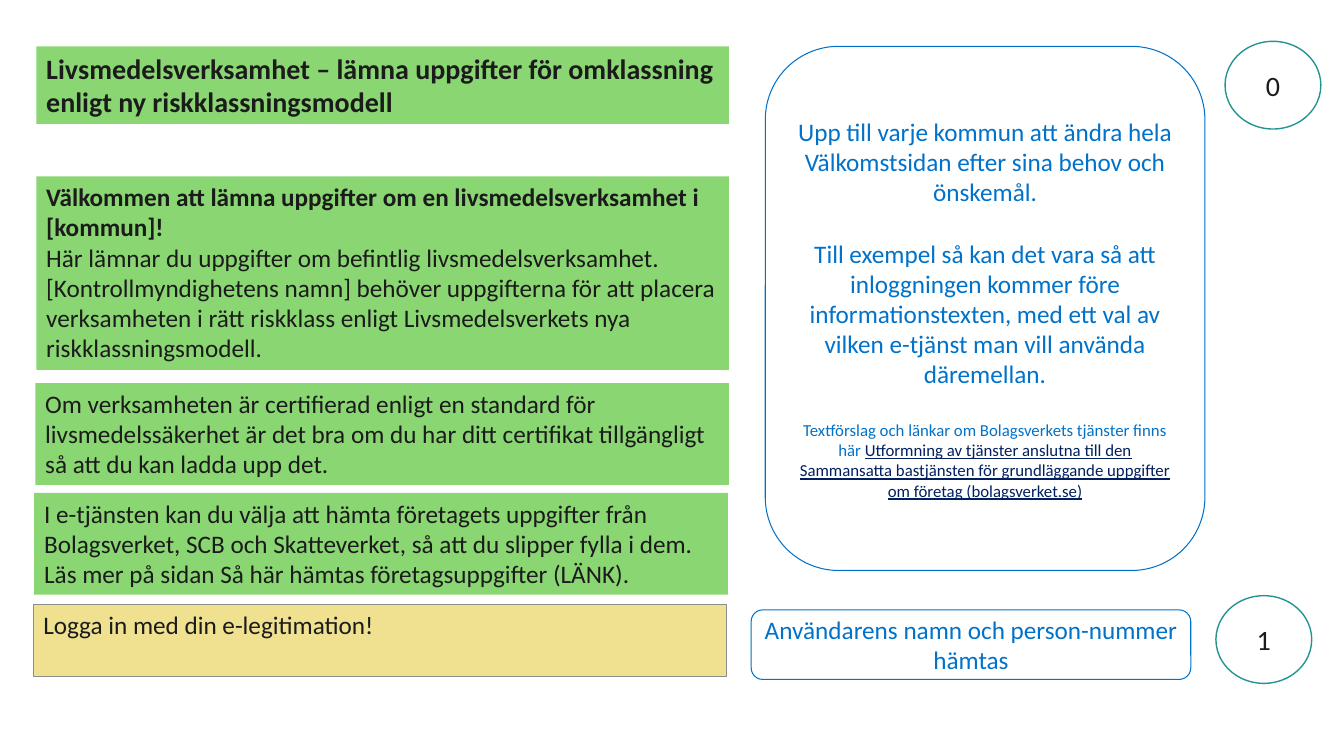
from pptx import Presentation
from pptx import util as u
from pptx.dml.color import RGBColor
from pptx.enum import shapes, text

COLORS = {
    "ink": "1B1B1B", "green": "8AD672", "sand": "F0E190", "grey": "8D8D8D",
    "blue": "0072CA", "navy": "002060", "teal": "259490", "white": "FFFFFF",
}
FORM = shapes.MSO_SHAPE.RECTANGLE
NOTE = shapes.MSO_SHAPE.ROUNDED_RECTANGLE
STEP = shapes.MSO_SHAPE.OVAL

deck = Presentation()
deck.slide_width, deck.slide_height = u.Inches(13.33), u.Inches(7.5)
slide = deck.slides.add_slide(deck.slide_layouts[6])


def rgb(name):
    return RGBColor.from_string(COLORS[name])


def add_box(kind, area, paragraphs, size, ink, fill=None, line=None, weight=0.75):
    """Area is left, top, width, height in percent of the slide."""
    left, top, width, height = area
    box = slide.shapes.add_shape(
        kind,
        int(deck.slide_width * left / 100), int(deck.slide_height * top / 100),
        int(deck.slide_width * width / 100), int(deck.slide_height * height / 100))
    box.shadow.inherit = False
    if fill:
        box.fill.solid()
        box.fill.fore_color.rgb = rgb(fill)
    else:
        box.fill.background()
    if line:
        box.line.color.rgb = rgb(line)
        box.line.width = u.Pt(weight)
    else:
        box.line.fill.background()

    frame = box.text_frame
    frame.word_wrap = True
    is_form = kind == FORM
    frame.vertical_anchor = text.MSO_ANCHOR.TOP if is_form else text.MSO_ANCHOR.MIDDLE
    frame.text = "\n".join(paragraphs)
    for paragraph in frame.paragraphs:
        paragraph.alignment = text.PP_ALIGN.LEFT if is_form else text.PP_ALIGN.CENTER
        for run in paragraph.runs:
            run.font.name = "Calibri"
            run.font.size = u.Pt(size)
            run.font.color.rgb = rgb(ink)
    return frame.paragraphs


# Form texts in the left column
heading, = add_box(FORM, (2.7, 6.13, 51.54, 10.27), [
    "Livsmedelsverksamhet – lämna uppgifter för omklassning enligt ny riskklassningsmodell",
], 20, "ink", "green")
welcome, _ = add_box(FORM, (2.7, 23.33, 51.54, 25.6), [
    "Välkommen att lämna uppgifter om en livsmedelsverksamhet i [kommun]!",
    "Här lämnar du uppgifter om befintlig livsmedelsverksamhet. "
    "[Kontrollmyndighetens namn] behöver uppgifterna för att placera verksamheten "
    "i rätt riskklass enligt Livsmedelsverkets nya riskklassningsmodell.",
], 18, "ink", "green")
for title in (heading, welcome):
    title.runs[0].font.bold = True

add_box(FORM, (2.63, 50.67, 51.61, 13.47), [
    "Om verksamheten är certifierad enligt en standard för livsmedelssäkerhet är det bra "
    "om du har ditt certifikat tillgängligt så att du kan ladda upp det.",
], 18, "ink", "green")
add_box(FORM, (2.55, 65.2, 51.61, 13.47), [
    "I e-tjänsten kan du välja att hämta företagets uppgifter från Bolagsverket, SCB och "
    "Skatteverket, så att du slipper fylla i dem. Läs mer på sidan Så här hämtas "
    "företagsuppgifter (LÄNK).",
], 18, "ink", "green")
add_box(FORM, (2.48, 80, 51.54, 9.47), ["Logga in med din e-legitimation!"],
        18, "ink", "sand", "grey", 0.5)

# Notes to the municipality
_, example, source = add_box(NOTE, (56.94, 6.13, 32.71, 69.33), [
    "Upp till varje kommun att ändra hela Välkomstsidan efter sina behov och önskemål.",
    "Till exempel så kan det vara så att inloggningen kommer före informationstexten, "
    "med ett val av vilken e-tjänst man vill använda däremellan.",
    "Textförslag och länkar om Bolagsverkets tjänster finns här ",
], 18, "blue", line="blue")
for paragraph in (example, source):
    paragraph.space_before = u.Pt(22)

guide = source.add_run()
guide.text = ("Utformning av tjänster anslutna till den Sammansatta bastjänsten för "
              "grundläggande uppgifter om företag (bolagsverket.se)")
guide.font.name = "Calibri"
guide.font.color.rgb = rgb("navy")
guide.font.underline = True
for run in source.runs:
    run.font.size = u.Pt(12)

add_box(NOTE, (55.89, 80.67, 32.71, 9.2),
        ["Användarens namn och person-nummer hämtas"], 18, "blue", line="blue")

# Step numbers
for number, left, top in (("0", 91.15, 5.47), ("1", 90.47, 78.8)):
    add_box(STEP, (left, top, 7.13, 11.6), [number], 20, "ink", "white", "teal", 1)

deck.save("out.pptx")
